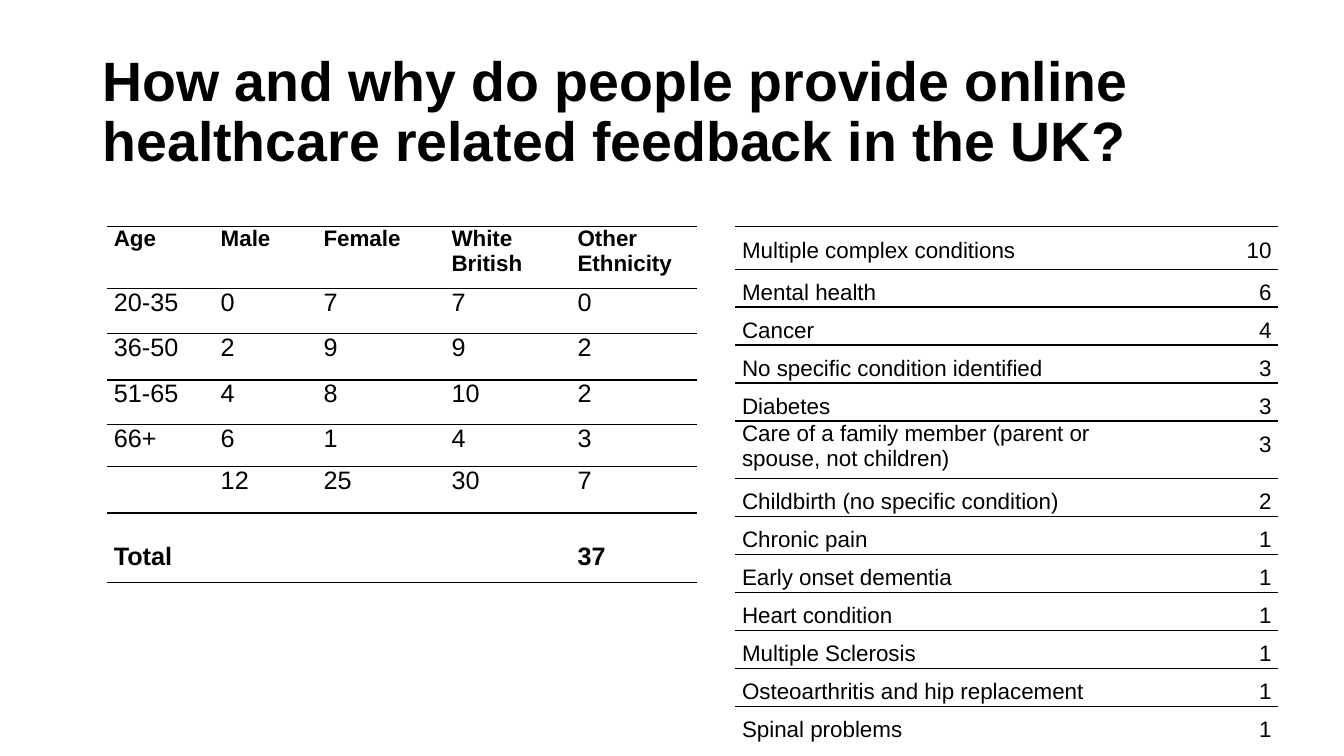
from lxml import etree
from pptx import Presentation
from pptx.dml.color import RGBColor
from pptx.enum import text
from pptx.oxml import ns
from pptx.util import Inches, Pt

# Content
TITLE = "How and why do people provide online healthcare related feedback in the UK?"
PARTICIPANTS = [
    ("Age", "Male", "Female", "White British", "Other\nEthnicity"),
    ("20-35", "0", "7", "7", "0"),
    ("36-50", "2", "9", "9", "2"),
    ("51-65", "4", "8", "10", "2"),
    ("66+", "6", "1", "4", "3"),
    ("", "12", "25", "30", "7"),
    ("Total", "", "", "", "37"),
]
CONDITIONS = [
    ("Multiple complex conditions", "10"),
    ("Mental health", "6"),
    ("Cancer", "4"),
    ("No specific condition identified", "3"),
    ("Diabetes", "3"),
    ("Care of a family member (parent or spouse, not children)", "3"),
    ("Childbirth (no specific condition)", "2"),
    ("Chronic pain", "1"),
    ("Early onset dementia", "1"),
    ("Heart condition", "1"),
    ("Multiple Sclerosis", "1"),
    ("Osteoarthritis and hip replacement", "1"),
    ("Spinal problems", "1"),
]
FAMILY_ROW = 5

THEME = {
    "font": "Arial", "ink": "000000",
    "title": 39.6, "body": 18, "small": 16, "rule": 1,
    "plain_table": "{2D5ABB26-0587-4C30-8999-92F81FD0307C}",
}
PARTICIPANT_COLS = [1.06, 1.02, 1.27, 1.25, 1.25]
PARTICIPANT_ROWS = [0.61, 0.45, 0.46, 0.44, 0.42, 0.46, 0.69]
CONDITION_COLS = [4.41, 0.98]
CONDITION_ROWS = [0.42] + [0.37] * 4 + [0.57] + [0.37] * 6 + [0.5]
TABLE_TOP = 2.25
TOTAL_DROP = 0.29  # one body line
CONDITION_DROP = 0.11  # sets single lines low in their rows


def style(p, size, bold=False):
    p.font.name = THEME["font"]
    p.font.size = Pt(size)
    p.font.bold = bold
    p.font.color.rgb = RGBColor.from_string(THEME["ink"])


def rule_cell(cell):
    """Rule the top and bottom of a cell and leave its sides open."""
    tc_pr = cell._tc.get_or_add_tcPr()
    for i, side in enumerate(("lnL", "lnR", "lnT", "lnB")):
        ln = etree.Element(ns.qn(f"a:{side}"), w=str(Pt(THEME["rule"])))
        if side in ("lnT", "lnB"):
            fill = etree.SubElement(ln, ns.qn("a:solidFill"))
            etree.SubElement(fill, ns.qn("a:srgbClr"), val=THEME["ink"])
        else:
            etree.SubElement(ln, ns.qn("a:noFill"))
        tc_pr.insert(i, ln)


def add_ruled_table(slide, left, rows, widths, heights, format_cell):
    frame = slide.shapes.add_table(
        len(rows), len(widths), Inches(left), Inches(TABLE_TOP),
        Inches(sum(widths)), Inches(sum(heights)))
    table = frame.table
    table.first_row = table.horz_banding = False
    table._tbl.tblPr.find(ns.qn("a:tableStyleId")).text = THEME["plain_table"]
    for col, width in zip(table.columns, widths):
        col.width = Inches(width)
    for r, (row, values, height) in enumerate(zip(table.rows, rows, heights)):
        row.height = Inches(height)
        for c, (cell, value) in enumerate(zip(row.cells, values)):
            cell.text = value
            cell.margin_left = cell.margin_right = Inches(0.07)
            cell.margin_top = cell.margin_bottom = 0
            cell.fill.background()
            rule_cell(cell)
            format_cell(cell, r, c)


def format_participant(cell, r, c):
    header, total = r == 0, r == len(PARTICIPANTS) - 1
    if total:
        cell.margin_top = Inches(TOTAL_DROP)
    for p in cell.text_frame.paragraphs:
        style(p, THEME["small" if header else "body"], header or total)


def format_condition(cell, r, c):
    if (r, c) != (FAMILY_ROW, 0):
        cell.margin_top = Inches(CONDITION_DROP)
    p = cell.text_frame.paragraphs[0]
    style(p, THEME["small"])
    if c == 1:
        p.alignment = text.PP_ALIGN.RIGHT


def main():
    prs = Presentation()
    prs.slide_width, prs.slide_height = Inches(13.33), Inches(7.5)
    slide = prs.slides.add_slide(prs.slide_layouts[6])

    # Title
    sp = slide.shapes.add_textbox(Inches(0.92), Inches(0.4), Inches(11.5), Inches(1.45))
    tf = sp.text_frame
    tf.word_wrap = True
    tf.vertical_anchor = text.MSO_ANCHOR.MIDDLE
    p = tf.paragraphs[0]
    p.text = TITLE
    p.line_spacing = 0.9
    style(p, THEME["title"], True)

    # Participants by age, and their conditions
    add_ruled_table(slide, 1.06, PARTICIPANTS, PARTICIPANT_COLS,
                    PARTICIPANT_ROWS, format_participant)
    add_ruled_table(slide, 7.29, CONDITIONS, CONDITION_COLS,
                    CONDITION_ROWS, format_condition)

    prs.save("out.pptx")


if __name__ == "__main__":
    main()
